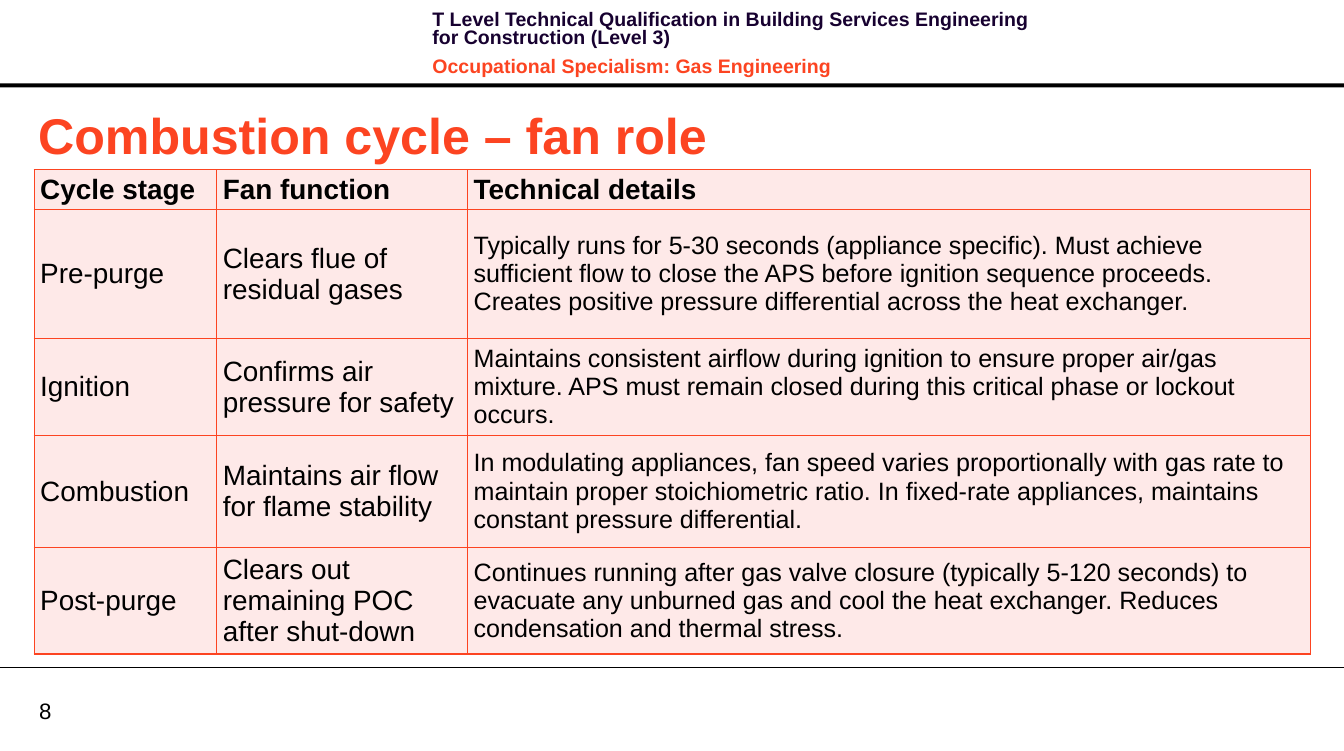
from lxml import etree
from pptx import Presentation
from pptx.dml.color import RGBColor
from pptx.enum.shapes import MSO_CONNECTOR, MSO_SHAPE
from pptx.enum.text import MSO_ANCHOR, PP_ALIGN
from pptx.oxml.ns import qn
from pptx.util import Pt

MIDDLE, TOP = MSO_ANCHOR.MIDDLE, MSO_ANCHOR.TOP
LEFT = PP_ALIGN.LEFT
RECTANGLE = MSO_SHAPE.RECTANGLE
STRAIGHT = MSO_CONNECTOR.STRAIGHT

EMU_PER_PX = 9144
PAGE_WIDTH, PAGE_HEIGHT = 1339, 748
FONT = "Arial"
BLACK = RGBColor(0x00, 0x00, 0x00)
NAVY = RGBColor(0x17, 0x01, 0x30)
ORANGE = RGBColor(0xFC, 0x44, 0x21)
PINK = RGBColor(0xFE, 0xE9, 0xE8)

HEADER_LINES = [
    ("T Level Technical Qualification in Building Services Engineering "
     "for Construction (Level 3)", NAVY),
    ("Occupational Specialism: Gas Engineering", ORANGE),
]
COLUMN_WIDTHS = [182, 250, 840]
ROW_HEIGHTS = [37, 129, 94, 112, 98]
COLUMN_SIZES = [20, 20, 18]
HEADING_SIZE = 20
CYCLE_ROWS = [
    ("Cycle stage", "Fan function", "Technical details"),
    ("Pre-purge", "Clears flue of residual gases",
     "Typically runs for 5-30 seconds (appliance specific). Must achieve "
     "sufficient flow to close the APS before ignition sequence proceeds. "
     "Creates positive pressure differential across the heat exchanger."),
    ("Ignition", "Confirms air pressure for safety",
     "Maintains consistent airflow during ignition to ensure proper air/gas "
     "mixture. APS must remain closed during this critical phase or lockout "
     "occurs."),
    ("Combustion", "Maintains air flow for flame stability",
     "In modulating appliances, fan speed varies proportionally with gas rate "
     "to maintain proper stoichiometric ratio. In fixed-rate appliances, "
     "maintains constant pressure differential."),
    ("Post-purge", "Clears out remaining POC after shut-down",
     "Continues running after gas valve closure (typically 5-120 seconds) to "
     "evacuate any unburned gas and cool the heat exchanger. Reduces "
     "condensation and thermal stress."),
]


def px(*lengths):
    return [length * EMU_PER_PX for length in lengths]


def set_font(para, size, color, bold=False):
    para.font.name = FONT
    para.font.size = Pt(size)
    para.font.bold = bold
    para.font.color.rgb = color


def set_margins(target, side, end):
    target.margin_left, target.margin_right = px(side, side)
    target.margin_top, target.margin_bottom = px(end, end)


def add_text_box(page, area, lines, size, bold=False, anchor=TOP,
                 margins=(10, 5), line_spacing=None, gap=0):
    frame = page.shapes.add_textbox(*px(*area)).text_frame
    frame.word_wrap = True
    frame.vertical_anchor = anchor
    set_margins(frame, *margins)
    for index, (text, color) in enumerate(lines):
        para = frame.add_paragraph() if index else frame.paragraphs[0]
        para.text = text
        if line_spacing:
            para.line_spacing = Pt(line_spacing)
        if index:
            para.space_before = Pt(gap)
        para.space_after = Pt(gap)
        set_font(para, size, color, bold)


def add_header_bar(page):
    bar = page.shapes.add_shape(RECTANGLE, *px(0, 83, PAGE_WIDTH, 4))
    bar.shadow.inherit = False
    bar.fill.solid()
    bar.fill.fore_color.rgb = BLACK
    bar.line.fill.background()


def add_footer_line(page):
    line = page.shapes.add_connector(STRAIGHT, *px(0, 665, PAGE_WIDTH, 665))
    line.line.color.rgb = BLACK
    line.line.width = Pt(0.75)
    etree.SubElement(line._element.spPr, qn("a:effectLst"))


def set_title(page, text):
    title = page.shapes.title
    title.left, title.top, title.width, title.height = px(28, 98, 1272, 71)
    title.text_frame.text = text
    title.text_frame.vertical_anchor = MIDDLE
    para = title.text_frame.paragraphs[0]
    para.alignment = LEFT
    set_font(para, 36, ORANGE, bold=True)


def set_borders(cell, color, points):
    properties = cell._tc.get_or_add_tcPr()
    for side in ("lnL", "lnR", "lnT", "lnB"):
        border = etree.SubElement(properties, qn(f"a:{side}"), w=str(Pt(points)))
        fill = etree.SubElement(border, qn("a:solidFill"))
        etree.SubElement(fill, qn("a:srgbClr"), val=str(color))


def fill_cell(cell, text, size, bold):
    set_borders(cell, ORANGE, 1)
    cell.fill.solid()
    cell.fill.fore_color.rgb = PINK
    cell.vertical_anchor = MIDDLE
    set_margins(cell, 6, 3)
    cell.text = text
    set_font(cell.text_frame.paragraphs[0], size, BLACK, bold)


def add_cycle_table(page):
    area = px(34, 169, sum(COLUMN_WIDTHS), sum(ROW_HEIGHTS))
    table = page.shapes.add_table(
        len(ROW_HEIGHTS), len(COLUMN_WIDTHS), *area).table
    table.horz_banding = False
    for column, width in zip(table.columns, px(*COLUMN_WIDTHS)):
        column.width = width
    for row, height in zip(table.rows, px(*ROW_HEIGHTS)):
        row.height = height
    for row_index, texts in enumerate(CYCLE_ROWS):
        heading = row_index == 0
        for column_index, text in enumerate(texts):
            size = HEADING_SIZE if heading else COLUMN_SIZES[column_index]
            fill_cell(table.cell(row_index, column_index), text, size, heading)


def main():
    deck = Presentation()
    deck.slide_width, deck.slide_height = px(PAGE_WIDTH, PAGE_HEIGHT)
    page = deck.slides.add_slide(deck.slide_layouts.get_by_name("Title Only"))

    # Header and footer
    add_header_bar(page)
    add_text_box(page, (421, 7, 637, 64), HEADER_LINES, 14, bold=True,
                 line_spacing=13.1, gap=4)
    add_footer_line(page)
    add_text_box(page, (39, 694, 64, 27), [("8", BLACK)], 16,
                 anchor=MIDDLE, margins=(0, 0))

    # Title and table
    set_title(page, "Combustion cycle – fan role")
    add_cycle_table(page)

    deck.save("out.pptx")


if __name__ == "__main__":
    main()
